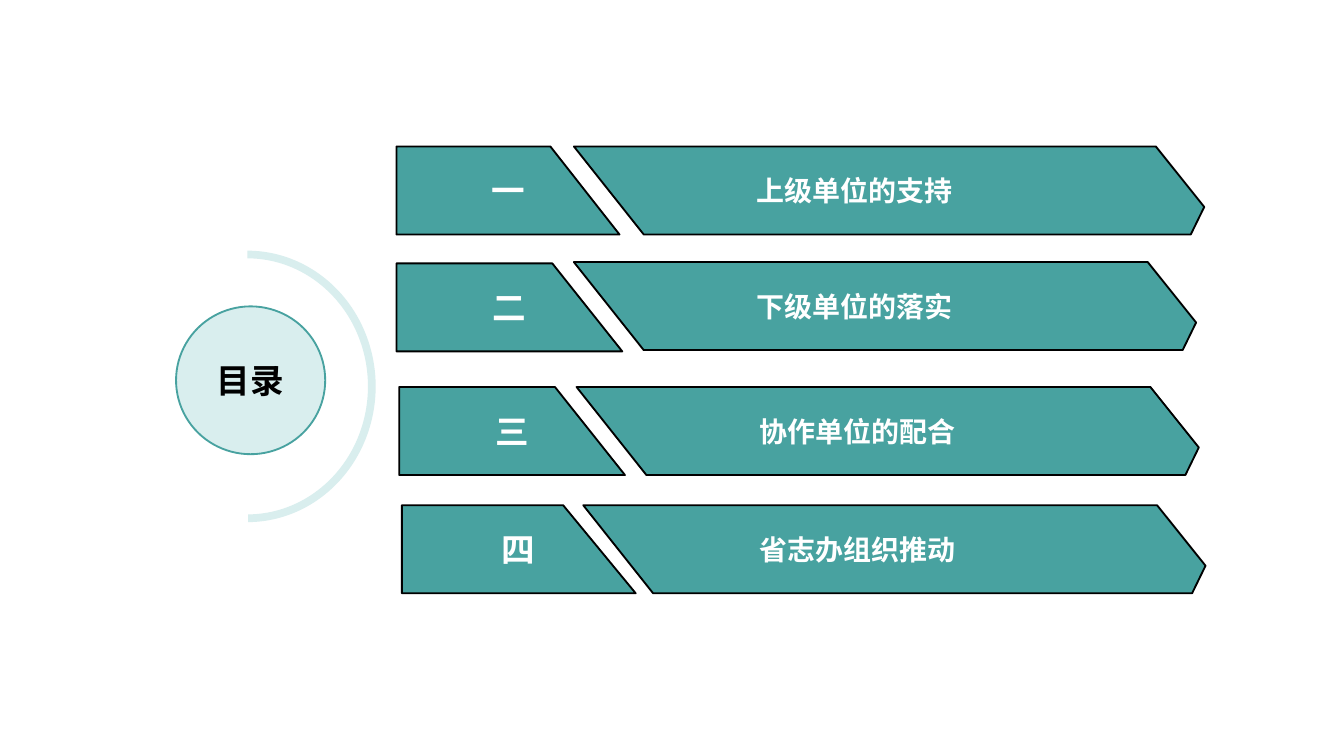
from dataclasses import dataclass

from lxml import etree
from pptx import Presentation
from pptx.dml.color import RGBColor
from pptx.enum.shapes import MSO_SHAPE
from pptx.enum.text import MSO_ANCHOR, PP_ALIGN
from pptx.oxml.ns import qn
from pptx.shapes.autoshape import Shape
from pptx.slide import Slide
from pptx.util import Inches, Pt

ELLIPSE, BLOCK_ARC = MSO_SHAPE.OVAL, MSO_SHAPE.BLOCK_ARC
MIDDLE = MSO_ANCHOR.MIDDLE
LEFT, CENTER = PP_ALIGN.LEFT, PP_ALIGN.CENTER
SLIDE_WIDTH = Inches(10)
SLIDE_HEIGHT = SLIDE_WIDTH * 9 // 16
GRID = SLIDE_WIDTH // 100
BAND_HEIGHT = 6.55
ARC_ADJUSTMENTS = (108, 215.79, 0.03)


@dataclass(frozen=True)
class Theme:
    teal: RGBColor = RGBColor(0x48, 0xA2, 0xA0)
    pale: RGBColor = RGBColor(0xD9, 0xEE, 0xEE)
    black: RGBColor = RGBColor(0, 0, 0)
    white: RGBColor = RGBColor(255, 255, 255)
    latin: str = "Arial"
    cjk: str = "Noto Sans CJK SC"
    heading: Pt = Pt(18)
    body: Pt = Pt(15)
    outline: Pt = Pt(1)


@dataclass(frozen=True)
class Box:
    col: float
    row: float
    cols: float
    rows: float

    def emu(self) -> list[int]:
        return [grid(v) for v in (self.col, self.row, self.cols, self.rows)]


@dataclass(frozen=True)
class Entry:
    number: str
    text: str
    tab: Box
    bar: Box
    indent: float = 13.6


THEME = Theme()
CIRCLE = Box(13.1, 22.8, 11.1, 11)
ARC = Box(8.3, 19.2, 20.2, 19.1)
ENTRIES = (
    Entry("一", "上级单位的支持", Box(29.5, 10.9, 16.6, BAND_HEIGHT),
          Box(42.7, 10.9, 46.9, BAND_HEIGHT)),
    Entry("二", "下级单位的落实", Box(29.5, 19.6, 16.8, BAND_HEIGHT),
          Box(42.7, 19.5, 46.3, BAND_HEIGHT)),
    Entry("三", "协作单位的配合", Box(29.7, 28.8, 16.8, BAND_HEIGHT),
          Box(42.9, 28.8, 46.3, BAND_HEIGHT)),
    Entry("四", "省志办组织推动", Box(29.9, 37.6, 17.4, BAND_HEIGHT),
          Box(43.4, 37.6, 46.3, BAND_HEIGHT), 13.1),
)


def grid(value: float) -> int:
    return round(value * GRID)


def paint(sp: Shape, fill: RGBColor, line: RGBColor | None = None) -> None:
    sp.shadow.inherit = False
    sp.fill.solid()
    sp.fill.fore_color.rgb = fill
    if line is None:
        sp.line.fill.background()
    else:
        sp.line.color.rgb = line
        sp.line.width = THEME.outline


def write(sp: Shape, text: str, size: Pt, color: RGBColor, font: str,
          align: PP_ALIGN = CENTER, indent: float = 1) -> None:
    tf = sp.text_frame
    frame = {"word_wrap": True, "vertical_anchor": MIDDLE,
             "margin_left": grid(indent), "margin_right": grid(1),
             "margin_top": grid(0.5), "margin_bottom": grid(0.5)}
    for name, value in frame.items():
        setattr(tf, name, value)
    p = tf.paragraphs[0]
    p.alignment = align
    r = p.add_run()
    r.text = text
    for name, value in {"size": size, "bold": True, "name": font}.items():
        setattr(r.font, name, value)
    r.font.color.rgb = color
    etree.SubElement(r.font._element, qn("a:ea"), typeface=font)


def add_band(slide: Slide, points: list[tuple[float, float]]) -> Shape:
    start, *rest = [(grid(x), grid(y)) for x, y in points]
    builder = slide.shapes.build_freeform(*start)
    builder.add_line_segments(rest, close=True)
    sp = builder.convert_to_shape()
    paint(sp, THEME.teal, THEME.black)
    return sp


def add_entry(slide: Slide, entry: Entry) -> None:
    box = entry.tab
    right, bottom = box.col + box.cols, box.row + box.rows
    tab = add_band(slide, [
        (box.col, box.row), (right - box.cols * 0.31, box.row),
        (right, bottom), (box.col, bottom)])
    write(tab, entry.number, THEME.heading, THEME.white, THEME.cjk)

    box = entry.bar
    right, bottom = box.col + box.cols, box.row + box.rows
    bar = add_band(slide, [
        (box.col, box.row), (right - 3.6, box.row),
        (right, box.row + 4.5), (right - 1, bottom), (box.col + 5.2, bottom)])
    write(bar, entry.text, THEME.body, THEME.white, THEME.cjk, LEFT, entry.indent)


def add_heading(slide: Slide, text: str) -> None:
    circle = slide.shapes.add_shape(ELLIPSE, *CIRCLE.emu())
    paint(circle, THEME.pale, THEME.teal)
    write(circle, text, THEME.heading, THEME.black, THEME.latin)

    arc = slide.shapes.add_shape(BLOCK_ARC, *ARC.emu())
    arc.rotation = 90
    for i, value in enumerate(ARC_ADJUSTMENTS):
        arc.adjustments[i] = value
    paint(arc, THEME.pale)


def main() -> None:
    prs = Presentation()
    prs.slide_width, prs.slide_height = SLIDE_WIDTH, SLIDE_HEIGHT
    slide = prs.slides.add_slide(prs.slide_layouts[6])
    add_heading(slide, "目录")
    for entry in ENTRIES:
        add_entry(slide, entry)
    prs.save("out.pptx")


if __name__ == "__main__":
    main()
